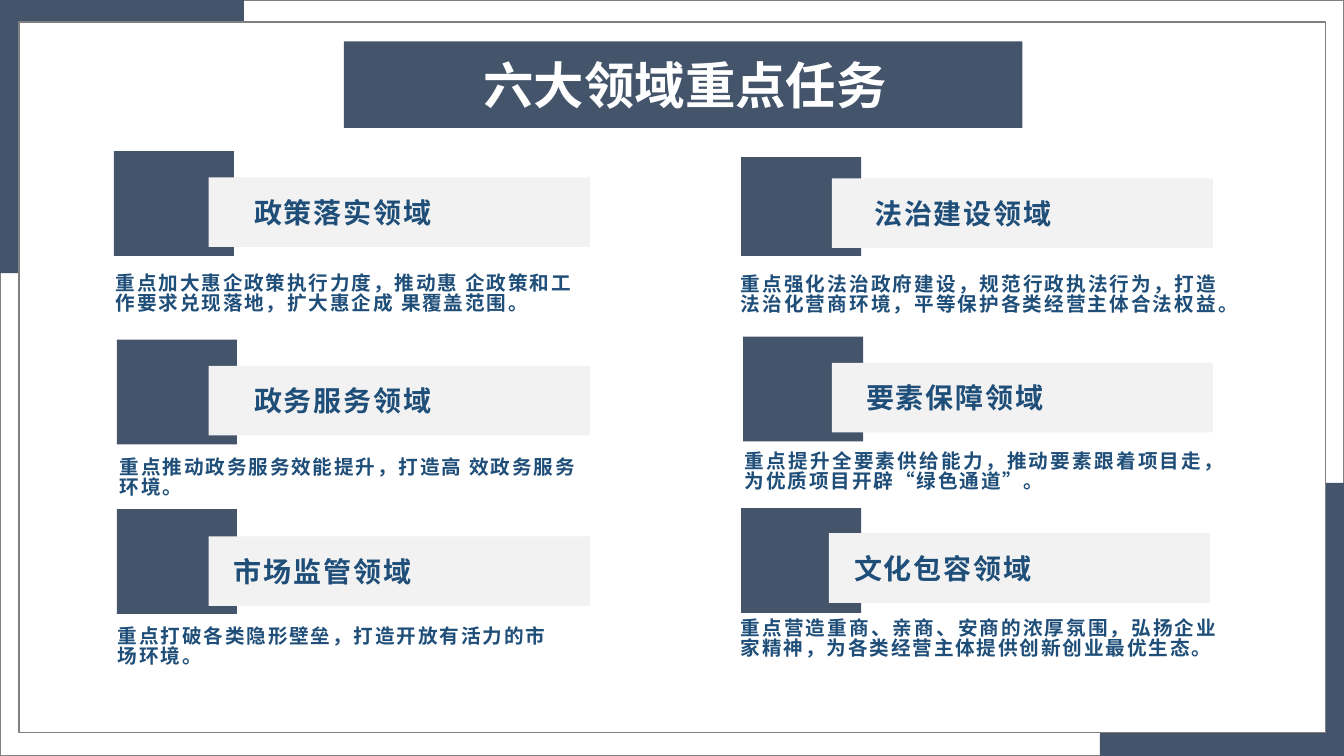
from pptx import Presentation
from pptx.dml.color import RGBColor
from pptx.enum.shapes import MSO_SHAPE
from pptx.enum.text import MSO_ANCHOR, PP_ALIGN
from pptx.oxml.ns import qn
from pptx.util import Inches, Pt
from lxml import etree

SLATE, PALE, WHITE, GREY, NAVY = "44546A", "F2F2F2", "FFFFFF", "808080", "1F4E79"
CJK_FONT = "Noto Sans CJK SC"

deck = Presentation()
deck.slide_width, deck.slide_height = Inches(13.33), Inches(7.5)
page = deck.slides.add_slide(deck.slide_layouts[6])


def add_rect(left, top, width, height, fill=None, line=None):
    rect = page.shapes.add_shape(MSO_SHAPE.RECTANGLE, Inches(left), Inches(top),
                                 Inches(width), Inches(height))
    rect.shadow.inherit = False
    if fill:
        rect.fill.solid()
        rect.fill.fore_color.rgb = RGBColor.from_string(fill)
    else:
        rect.fill.background()
    if line:
        rect.line.color.rgb = RGBColor.from_string(line)
        rect.line.width = Pt(1)
    else:
        rect.line.fill.background()
    return rect


def write(box, text, size, color=NAVY, font=CJK_FONT, align=PP_ALIGN.LEFT,
          anchor=MSO_ANCHOR.MIDDLE, indent=0.1, tracking=1.3, spacing=1.0):
    frame = box.text_frame
    frame.word_wrap = True
    frame.vertical_anchor = anchor
    frame.margin_left = Inches(indent)
    para = frame.paragraphs[0]
    para.alignment = align
    para.line_spacing = spacing
    span = para.add_run()
    span.text = text
    span.font.size = Pt(size)
    span.font.bold = True
    span.font.name = font
    span.font.color.rgb = RGBColor.from_string(color)
    # Letter spacing and East Asian font
    props = span.font._element
    props.set("spc", str(round(tracking * 100)))
    etree.SubElement(props, qn("a:ea")).set("typeface", CJK_FONT)


# Page frame with two slate corners
add_rect(0, 0, 13.33, 7.5, line=GREY)
for left, top in [(10.91, 4.79), (0, 0)]:
    add_rect(left, top, 2.42, 2.71, SLATE)
add_rect(0.19, 0.22, 12.96, 7.05, WHITE, GREY)

# Title banner
banner = add_rect(3.41, 0.41, 6.73, 0.86, SLATE)
write(banner, "六大领域重点任务", 36, WHITE, align=PP_ALIGN.CENTER, indent=0.14, tracking=0)

# Six areas: heading, heading indent, block (left, top, height),
# bar (left, top), task text, task box (left, top, width)
areas = [
    ("政策落实领域", 0.45, (1.13, 1.5, 1.04), (2.07, 1.76),
     "重点加大惠企政策执行力度，推动惠 企政策和工作要求兑现落地，扩大惠企成 果覆盖范围。",
     (1.05, 2.67, 4.93)),
    ("政务服务领域", 0.45, (1.16, 3.37, 1.04), (2.07, 3.63),
     "重点推动政务服务效能提升，打造高 效政务服务环境。",
     (1.09, 4.5, 4.93)),
    ("市场监管领域", 0.25, (1.16, 5.05, 1.04), (2.07, 5.32),
     "重点打破各类隐形壁垒，打造开放有活力的市场环境。",
     (1.07, 6.18, 4.67)),
    ("法治建设领域", 0.42, (7.35, 1.56, 0.98), (8.25, 1.77),
     "重点强化法治政府建设，规范行政执法行为，打造法治化营商环境，平等保护各类经营主体合法权益。",
     (7.25, 2.68, 4.93)),
    ("要素保障领域", 0.34, (7.37, 3.34, 1.04), (8.25, 3.6),
     "重点提升全要素供给能力，推动要素跟着项目走，为优质项目开辟“绿色通道”。",
     (7.29, 4.44, 4.96)),
    ("文化包容领域", 0.25, (7.35, 5.04, 1.04), (8.22, 5.29),
     "重点营造重商、亲商、安商的浓厚氛围，弘扬企业家精神，为各类经营主体提供创新创业最优生态。",
     (7.25, 6.1, 4.93)),
]
for heading, indent, (left, top, height), bar_place, task, task_place in areas:
    add_rect(left, top, 1.19, height, SLATE)
    bar = add_rect(*bar_place, 3.78, 0.69, PALE)
    write(bar, heading, 20, indent=indent)

    task_left, task_top, task_width = task_place
    task_box = page.shapes.add_textbox(Inches(task_left), Inches(task_top),
                                       Inches(task_width), Inches(0.6))
    align = PP_ALIGN.JUSTIFY if task_left > 7 else PP_ALIGN.LEFT
    write(task_box, task, 14, font="Arial", align=align, anchor=MSO_ANCHOR.TOP, spacing=0.85)

deck.save("out.pptx")
